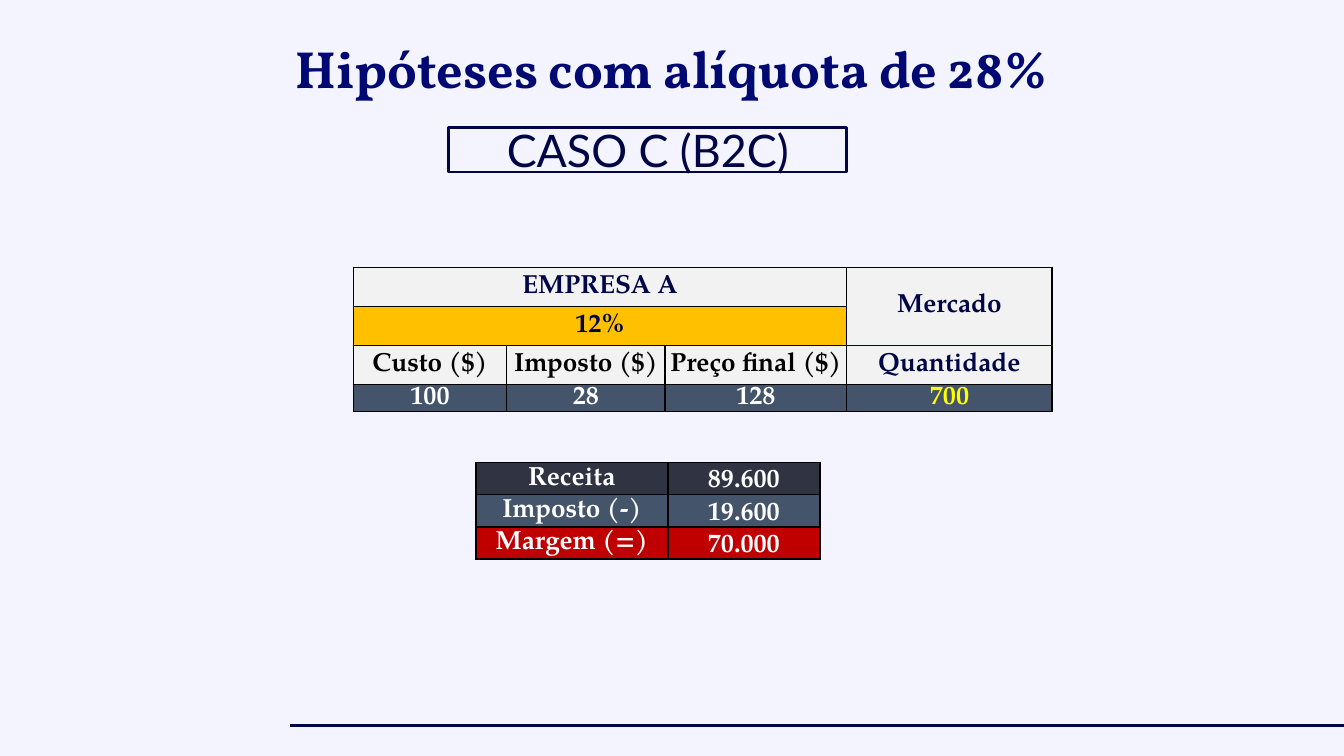
from lxml.etree import SubElement
from pptx import Presentation
from pptx.dml.color import RGBColor
from pptx.enum.shapes import MSO_CONNECTOR, MSO_SHAPE
from pptx.enum.text import MSO_ANCHOR as ANCHOR, PP_ALIGN as ALIGN
from pptx.oxml.ns import qn
from pptx.util import Inches, Pt

NAVY = RGBColor(0x00, 0x05, 0x46)
TITLE_BLUE = RGBColor(0x00, 0x08, 0x72)
PALE = RGBColor(0xF3, 0xF4, 0xFF)
GRAY = RGBColor(0xF2, 0xF2, 0xF2)
AMBER = RGBColor(0xFF, 0xC0, 0x00)
SLATE = RGBColor(0x44, 0x54, 0x6A)
DARK = RGBColor(0x2F, 0x33, 0x42)
RED = RGBColor(0xC0, 0x00, 0x00)
YELLOW = RGBColor(0xFF, 0xFF, 0x00)
BLACK = RGBColor(0x00, 0x00, 0x00)
WHITE = RGBColor(0xFF, 0xFF, 0xFF)

# Content
TITLE = "Hipóteses com alíquota de 28%"
CASE = "CASO C (B2C)"
WIDE, TIGHT = (0.1, 0.05, 0.1, 0.05), (0.01, 0.01, 0.01, 0)
HEAD = (GRAY, NAVY, ANCHOR.MIDDLE, WIDE)
RATE = (AMBER, NAVY, ANCHOR.MIDDLE, WIDE)
LABEL = (GRAY, BLACK, ANCHOR.MIDDLE, TIGHT)
VALUE = (SLATE, WHITE, ANCHOR.BOTTOM, TIGHT)
QUANTITY = (SLATE, YELLOW, ANCHOR.MIDDLE, TIGHT)
PRICES = [
    [("EMPRESA A", HEAD), ("", HEAD), ("", HEAD), ("Mercado", HEAD)],
    [("12%", RATE), ("", RATE), ("", RATE), ("", HEAD)],
    [("Custo ($)", LABEL), ("Imposto ($)", LABEL), ("Preço final ($)", LABEL),
     ("Quantidade", HEAD)],
    [("100", VALUE), ("28", VALUE), ("128", VALUE), ("700", QUANTITY)],
]
PRICE_MERGES = [((0, 0), (0, 2)), ((1, 0), (1, 2)), ((0, 3), (1, 3))]
RESULTS = [
    [(name, (fill, WHITE, ANCHOR.MIDDLE, TIGHT)),
     (amount, (fill, WHITE, ANCHOR.BOTTOM, TIGHT))]
    for name, amount, fill in [("Receita", "89.600", DARK),
                               ("Imposto (-)", "19.600", SLATE),
                               ("Margem (=)", "70.000", RED)]
]


def write(frame, text, font_name, size, color, bold=False):
    para = frame.paragraphs[0]
    para.text = text
    para.alignment = ALIGN.CENTER
    font = para.font
    font.name, font.size, font.bold = font_name, Pt(size), bold
    font.color.rgb = color


def set_borders(cell, colors):
    props = cell._tc.get_or_add_tcPr()
    for index, (side, color) in enumerate(colors.items()):
        line = props.makeelement(qn(f"a:{side}"), {"w": str(Pt(1))})
        fill = SubElement(line, qn("a:solidFill"))
        SubElement(fill, qn("a:srgbClr"), val=str(color))
        props.insert(index, line)


def add_grid(slide, rows, left, top, height, widths, row_height, merges=()):
    holder = slide.shapes.add_table(len(rows), len(widths), Inches(left), Inches(top),
                                    Inches(sum(widths)), Inches(height))
    table = holder.table
    table.first_row = table.horz_banding = False
    for column, width in zip(table.columns, widths):
        column.width = Inches(width)
    for row in table.rows:
        row.height = Inches(row_height)
    holder.height = Inches(height)
    for r, row in enumerate(rows):
        for c, (text, (fill, color, anchor, margins)) in enumerate(row):
            cell = table.cell(r, c)
            cell.fill.solid()
            cell.fill.fore_color.rgb = fill
            cell.vertical_anchor = anchor
            (cell.margin_left, cell.margin_top,
             cell.margin_right, cell.margin_bottom) = map(Inches, margins)
            write(cell.text_frame, text, "TeX Gyre Pagella", 14, color, True)
            set_borders(cell, dict.fromkeys(("lnL", "lnR", "lnT", "lnB"), BLACK))
    for first, last in merges:
        table.cell(*first).merge(table.cell(*last))
    return table


# Widescreen page, 16:9
deck = Presentation()
deck.slide_width = Inches(10)
deck.slide_height = deck.slide_width * 9 // 16
page = deck.slides.add_slide(deck.slide_layouts[5])
page.background.fill.solid()
page.background.fill.fore_color.rgb = PALE

# Footer rule
rule = page.shapes.add_connector(MSO_CONNECTOR.STRAIGHT, Inches(2.16), Inches(5.4),
                                 Inches(10), Inches(5.4))
rule.line.color.rgb = NAVY
rule.line.width = Pt(1.5)
SubElement(rule._element.spPr, qn("a:effectLst"))

# Title
title = page.shapes.title
title.left, title.top, title.width, title.height = map(Inches, (0.8, 0.22, 8.4, 0.57))
title.text_frame.vertical_anchor = ANCHOR.TOP
write(title.text_frame, TITLE, "Vollkorn", 28, TITLE_BLUE, True)

# Price and result tables
prices = add_grid(page, PRICES, 2.63, 1.99, 1.25, (1.14, 1.18, 1.35, 1.53),
                  0, PRICE_MERGES)
for row_index, side in ((0, "a:lnB"), (1, "a:lnB"), (2, "a:lnT")):
    border = prices.cell(row_index, 3)._tc.tcPr.find(qn(side))
    border.find(".//" + qn("a:srgbClr")).set("val", str(NAVY))
add_grid(page, RESULTS, 3.54, 3.44, 0.72, (1.43, 1.13), 0.24)

# Case label
case = page.shapes.add_shape(MSO_SHAPE.ROUNDED_RECTANGLE, Inches(3.34), Inches(0.95),
                             Inches(2.96), Inches(0.33))
case.adjustments[0] = 0
case.shadow.inherit = False
case.fill.background()
case.line.color.rgb = NAVY
case.line.width = Pt(1.5)
frame = case.text_frame
frame.word_wrap = True
frame.vertical_anchor = ANCHOR.MIDDLE
frame.margin_left = frame.margin_right = frame.margin_top = frame.margin_bottom = Inches(0.1)
write(frame, CASE, "Lato", 24, NAVY)

deck.save("out.pptx")
